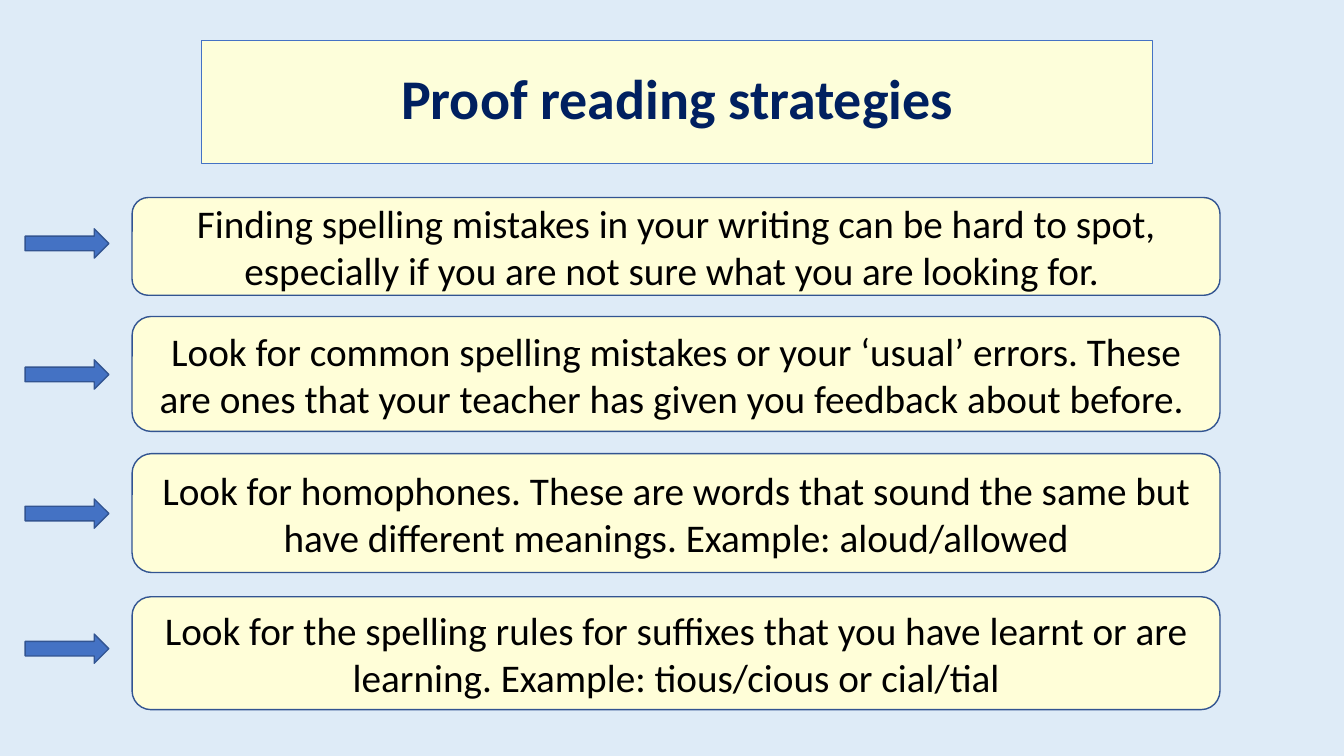
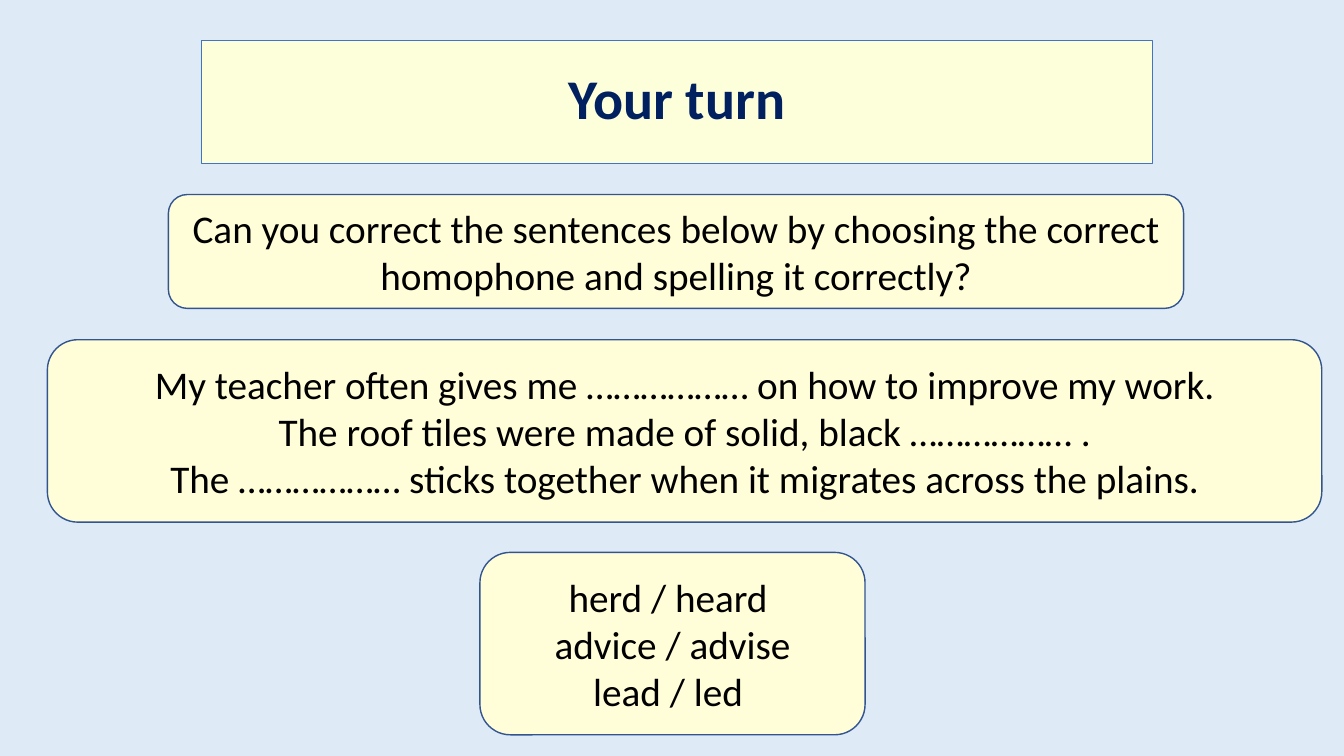
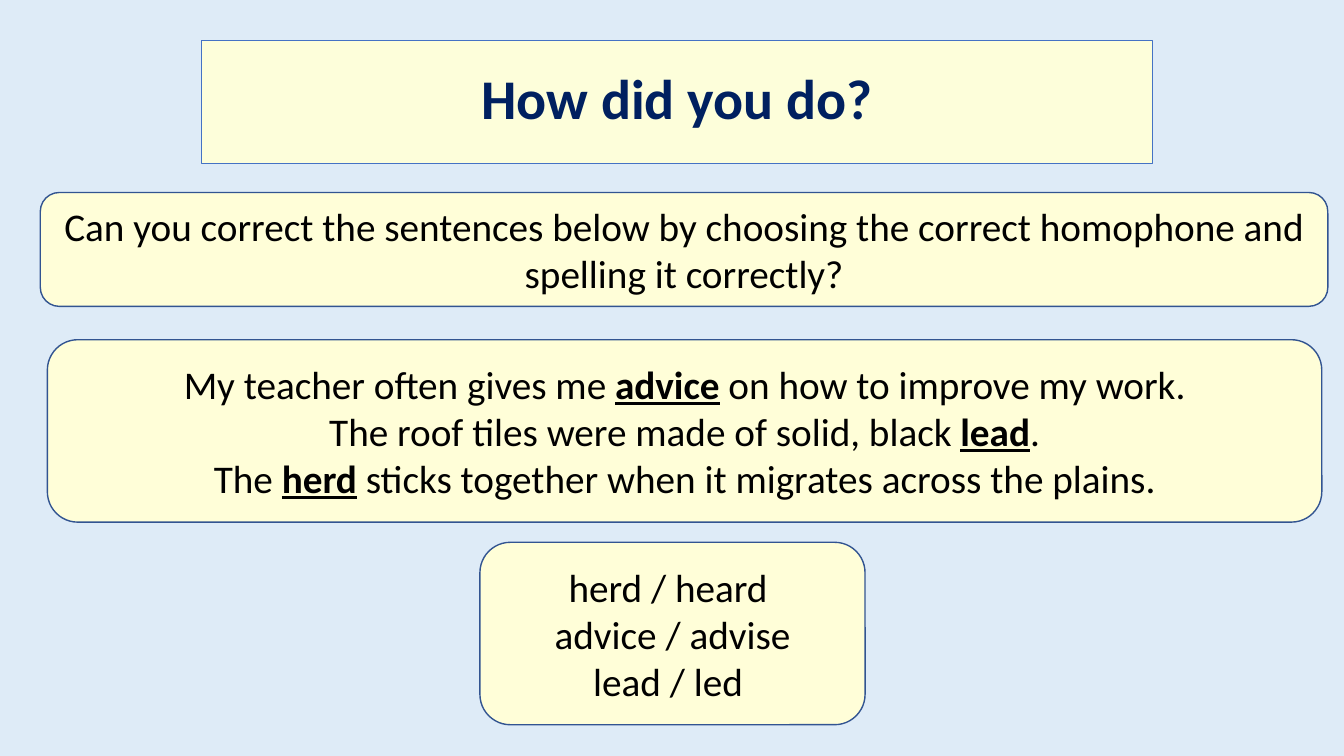
from pptx import Presentation
from pptx.dml.color import RGBColor
from pptx.enum.shapes import MSO_SHAPE
from pptx.enum.text import MSO_ANCHOR, MSO_AUTO_SIZE, PP_ALIGN
from pptx.util import Inches, Pt

ROUNDED, ARROW = MSO_SHAPE.ROUNDED_RECTANGLE, MSO_SHAPE.RIGHT_ARROW
MIDDLE, CENTER, NO_FIT = MSO_ANCHOR.MIDDLE, PP_ALIGN.CENTER, MSO_AUTO_SIZE.NONE

SKY = RGBColor(0xDE, 0xEB, 0xF7)
IVORY = RGBColor(0xFD, 0xFE, 0xDA)
CREAM = RGBColor(0xFF, 0xFE, 0xD8)
BLUE = RGBColor(0x44, 0x72, 0xC4)
EDGE = RGBColor(0x32, 0x54, 0x91)
NAVY = RGBColor(0x00, 0x20, 0x60)
BLACK = RGBColor(0, 0, 0)

WIDTH, HEIGHT = 13.33, 7.5
TITLE_AREA = (2, 0.4, 9.43, 1.22)
TITLE_FONT = {"name": "Calibri", "size": Pt(40), "bold": True}
BODY_FONT = {"name": "Calibri", "size": Pt(28)}
ANSWER_FONT = {"bold": True, "underline": True}

STRATEGY_LEFT, STRATEGY_WIDTH = 1.31, 10.79
ARROW_LEFT, ARROW_WIDTH, ARROW_HEIGHT = 0.25, 0.83, 0.29
STRATEGIES = [
    (1.96, 0.97, 2.27, "Finding spelling mistakes in your writing can be hard to spot, "
     "especially if you are not sure what you are looking for. "),
    (3.14, 1.14, 3.57, "Look for common spelling mistakes or your ‘usual’ errors. "
     "These are ones that your teacher has given you feedback about before. "),
    (4.5, 1.18, 4.95, "Look for homophones. These are words that sound the same "
     "but have different meanings. Example: aloud/allowed"),
    (5.92, 1.12, 6.29, "Look for the spelling rules for suffixes that you have learnt "
     "or are learning. Example: tious/cious or cial/tial"),
]

QUESTION = ["Can you correct the sentences below by choosing the correct homophone "
            "and spelling it correctly?"]
SENTENCES = [
    ("My teacher often gives me ", "advice", " on how to improve my work."),
    ("The roof tiles were made of solid, black ", "lead", "."),
    ("The ", "herd", " sticks together when it migrates across the plains."),
]
BLANK = "………………"
GAPPED = [
    f"{before}{BLANK}{' ' if after == '.' else ''}{after}"
    for before, _, after in SENTENCES
]
CHOICES = ["herd / heard ", "advice / advise", "lead / led "]
SENTENCE_AREA = (0.47, 3.37, 12.64, 1.81)

EXERCISES = [
    ("Your turn", [
        ((1.67, 1.93, 10.07, 1.13), QUESTION),
        (SENTENCE_AREA, GAPPED),
        ((4.76, 5.48, 3.82, 1.81), CHOICES),
    ]),
    ("How did you do?", [
        ((0.4, 1.91, 12.77, 1.13), QUESTION),
        (SENTENCE_AREA, SENTENCES),
        ((4.76, 5.38, 3.82, 1.81), CHOICES),
    ]),
]


def set_font(font, color, *formats):
    for values in formats:
        for name, value in values.items():
            setattr(font, name, value)
    font.color.rgb = color


def paint(shape, fill, line, line_width):
    shape.fill.solid()
    shape.fill.fore_color.rgb = fill
    shape.line.color.rgb = line
    shape.line.width = Pt(line_width)


def add_shape(slide, kind, area, fill):
    shape = slide.shapes.add_shape(kind, *map(Inches, area))
    shape.shadow.inherit = False
    paint(shape, fill, EDGE, 1)
    return shape


def add_panel(slide, area, lines):
    frame = add_shape(slide, ROUNDED, area, CREAM).text_frame
    frame.word_wrap = True
    frame.vertical_anchor = MIDDLE
    for index, line in enumerate(lines):
        paragraph = frame.add_paragraph() if index else frame.paragraphs[0]
        paragraph.alignment = CENTER
        parts = (line,) if isinstance(line, str) else line
        for position, text in enumerate(parts):
            run = paragraph.add_run()
            run.text = text
            set_font(run.font, BLACK, BODY_FONT, ANSWER_FONT if position == 1 else {})


def add_slide(presentation, heading):
    slide = presentation.slides.add_slide(presentation.slide_layouts[5])
    title = slide.shapes.title
    title.left, title.top, title.width, title.height = map(Inches, TITLE_AREA)
    paint(title, IVORY, BLUE, 0.75)
    frame = title.text_frame
    frame.text = heading
    frame.auto_size = NO_FIT
    frame.vertical_anchor = MIDDLE
    paragraph = frame.paragraphs[0]
    paragraph.alignment = CENTER
    paragraph.line_spacing = 0.9
    set_font(paragraph.runs[0].font, NAVY, TITLE_FONT)
    return slide


def main():
    presentation = Presentation()
    presentation.slide_width, presentation.slide_height = Inches(WIDTH), Inches(HEIGHT)
    background = presentation.slide_master.background.fill
    background.solid()
    background.fore_color.rgb = SKY

    slide = add_slide(presentation, "Proof reading strategies")
    for top, height, arrow_top, text in STRATEGIES:
        add_panel(slide, (STRATEGY_LEFT, top, STRATEGY_WIDTH, height), [text])
        add_shape(slide, ARROW, (ARROW_LEFT, arrow_top, ARROW_WIDTH, ARROW_HEIGHT), BLUE)

    for heading, panels in EXERCISES:
        slide = add_slide(presentation, heading)
        for area, lines in panels:
            add_panel(slide, area, lines)

    presentation.save("out.pptx")


if __name__ == "__main__":
    main()
